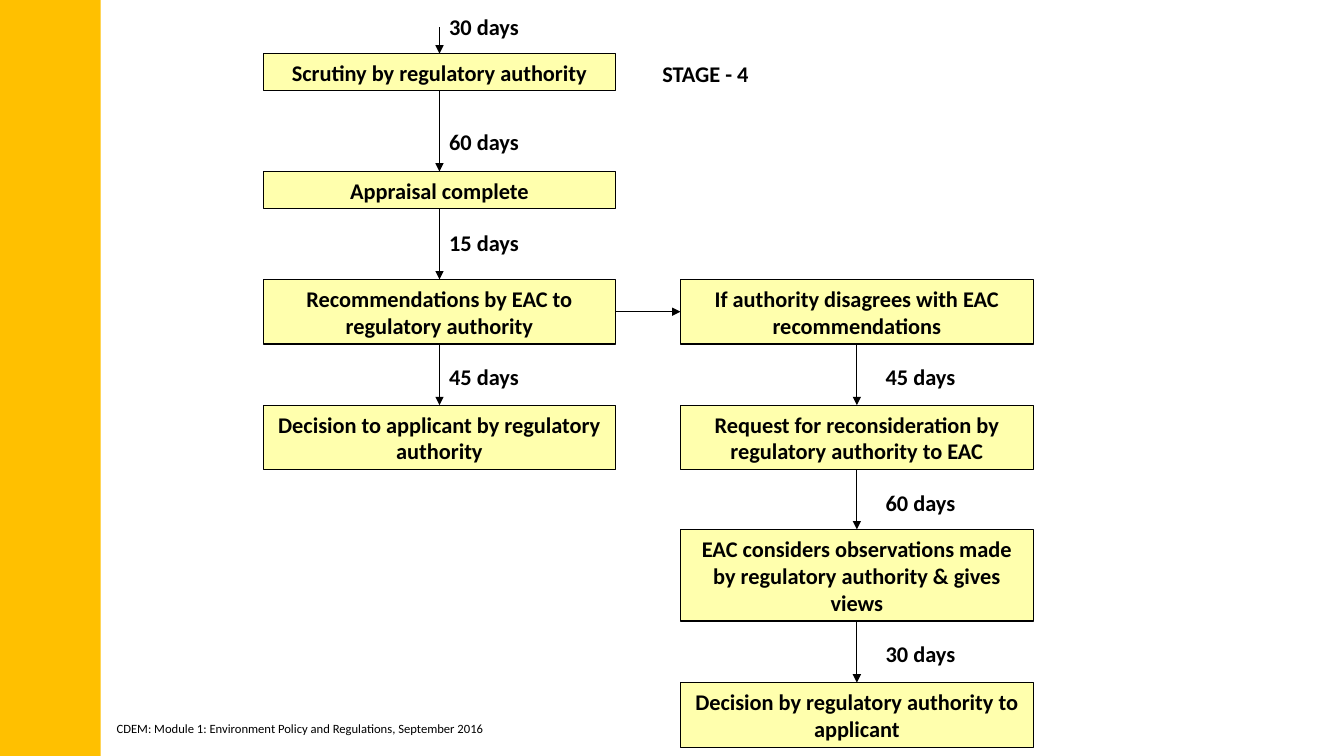
from dataclasses import dataclass
from itertools import pairwise

from lxml.etree import SubElement
from pptx import Presentation
from pptx.dml.color import RGBColor
from pptx.enum.shapes import MSO_CONNECTOR as Connector, MSO_SHAPE as Preset
from pptx.enum.text import MSO_ANCHOR as Anchor, MSO_AUTO_SIZE as AutoSize, PP_ALIGN as Align
from pptx.oxml.ns import qn
from pptx.util import Cm, Pt


@dataclass(frozen=True)
class Theme:
    ink: RGBColor = RGBColor(0, 0, 0)
    band: RGBColor = RGBColor(0xFF, 0xC0, 0x00)
    step: RGBColor = RGBColor(0xFF, 0xFF, 0x99)
    step_opacity: int = 80
    font: str = "Calibri"
    body: Pt = Pt(16)
    footer: Pt = Pt(9)
    rule: Pt = Pt(0.75)


THEME = Theme()
STEP_WIDTH = 8.89
LABEL_WIDTH, LABEL_HEIGHT = 3.96, 0.94
TOP, LEFT, BOTTOM, RIGHT = range(4)

APPRAISAL_LEFT, APPRAISAL_LABELS = 6.63, 11.07
APPRAISAL_STEPS = [
    ("Scrutiny by regulatory authority", 1.35, 0.94),
    ("Appraisal complete", 4.32, 0.94),
    ("Recommendations by EAC to regulatory authority", 7.04, 1.63),
    ("Decision to applicant by regulatory authority", 10.21, 1.63),
]
APPRAISAL_DELAYS = [("30 days", 0.2), ("60 days", 3.1), ("15 days", 5.64), ("45 days", 9.02)]

REVIEW_LEFT, REVIEW_LABELS = 17.15, 22.07
REVIEW_STEPS = [
    ("If authority disagrees with EAC recommendations", 7.04, 1.63),
    ("Request for reconsideration by regulatory authority to EAC", 10.21, 1.63),
    ("EAC considers observations made by regulatory authority & gives views", 13.34, 2.31),
    ("Decision by regulatory authority to applicant", 17.2, 1.63),
]
REVIEW_DELAYS = [("45 days", 9.02), ("60 days", 12.19), ("30 days", 16)]


def apply_format(target, values):
    for attribute, value in values.items():
        setattr(target, attribute, value)


def write(frame, wording, align=Align.LEFT, size=THEME.body, bold=True, wrap=True, anchor=Anchor.TOP):
    apply_format(frame, {"word_wrap": wrap, "auto_size": AutoSize.SHAPE_TO_FIT_TEXT,
                         "vertical_anchor": anchor})
    line = frame.paragraphs[0]
    line.alignment = align
    words = line.add_run()
    words.text = wording
    apply_format(words.font, {"name": THEME.font, "size": size, "bold": bold})
    words.font.color.rgb = THEME.ink


def add_label(slide, wording, left, top, width=LABEL_WIDTH, height=LABEL_HEIGHT, **style):
    label = slide.shapes.add_textbox(Cm(left), Cm(top), Cm(width), Cm(height))
    write(label.text_frame, wording, **style)


def add_block(slide, left, top, width, height, colour):
    block = slide.shapes.add_shape(Preset.RECTANGLE, Cm(left), Cm(top), Cm(width), Cm(height))
    block.shadow.inherit = False
    block.fill.solid()
    block.fill.fore_color.rgb = colour
    return block


def add_band(slide):
    band = add_block(slide, 0, 0, 2.54, 19.05, THEME.band)
    band.line.fill.background()


def add_step(slide, wording, left, top, height):
    step = add_block(slide, left, top, STEP_WIDTH, height, THEME.step)
    colour = step.fill._xPr.find(f"{qn('a:solidFill')}/{qn('a:srgbClr')}")
    SubElement(colour, qn("a:alpha"), val=str(THEME.step_opacity * 1000))
    step.line.color.rgb = THEME.ink
    step.line.width = THEME.rule
    write(step.text_frame, wording, align=Align.CENTER, anchor=Anchor.MIDDLE)
    return step


def add_arrow(slide, start_x, start_y, end_x, end_y):
    arrow = slide.shapes.add_connector(Connector.STRAIGHT, start_x, start_y, end_x, end_y)
    arrow.line.color.rgb = THEME.ink
    arrow.line.width = THEME.rule
    SubElement(arrow.line._get_or_add_ln(), qn("a:tailEnd"), type="triangle")
    SubElement(arrow._element.spPr, qn("a:effectLst"))
    return arrow


def link(slide, source, source_side, target, target_side):
    arrow = add_arrow(slide, 0, 0, 0, 0)
    arrow.begin_connect(source, source_side)
    arrow.end_connect(target, target_side)


def add_column(slide, left, steps, label_left, delays):
    boxes = [add_step(slide, wording, left, top, height) for wording, top, height in steps]
    for upper, lower in pairwise(boxes):
        link(slide, upper, BOTTOM, lower, TOP)
    for wording, top in delays:
        add_label(slide, wording, label_left, top)
    return boxes


def main():
    deck = Presentation()
    apply_format(deck, {"slide_width": Cm(33.87), "slide_height": Cm(19.05)})
    slide = deck.slides.add_slide(deck.slide_layouts[6])

    add_band(slide)
    add_label(slide, "CDEM: Module 1: Environment Policy and Regulations, September 2016",
              2.69, 18.03, 9.93, 0.64, size=THEME.footer, bold=False, wrap=False)

    appraisal = add_column(slide, APPRAISAL_LEFT, APPRAISAL_STEPS, APPRAISAL_LABELS, APPRAISAL_DELAYS)
    review = add_column(slide, REVIEW_LEFT, REVIEW_STEPS, REVIEW_LABELS, REVIEW_DELAYS)
    scrutiny, recommendations = appraisal[0], appraisal[2]
    link(slide, recommendations, RIGHT, review[0], LEFT)

    entry_x = scrutiny.left + scrutiny.width // 2
    add_arrow(slide, entry_x, Cm(0.69), entry_x, scrutiny.top)
    add_label(slide, "STAGE - 4", 15.52, 1.4, width=4.52, align=Align.CENTER)

    deck.save("out.pptx")


if __name__ == "__main__":
    main()
